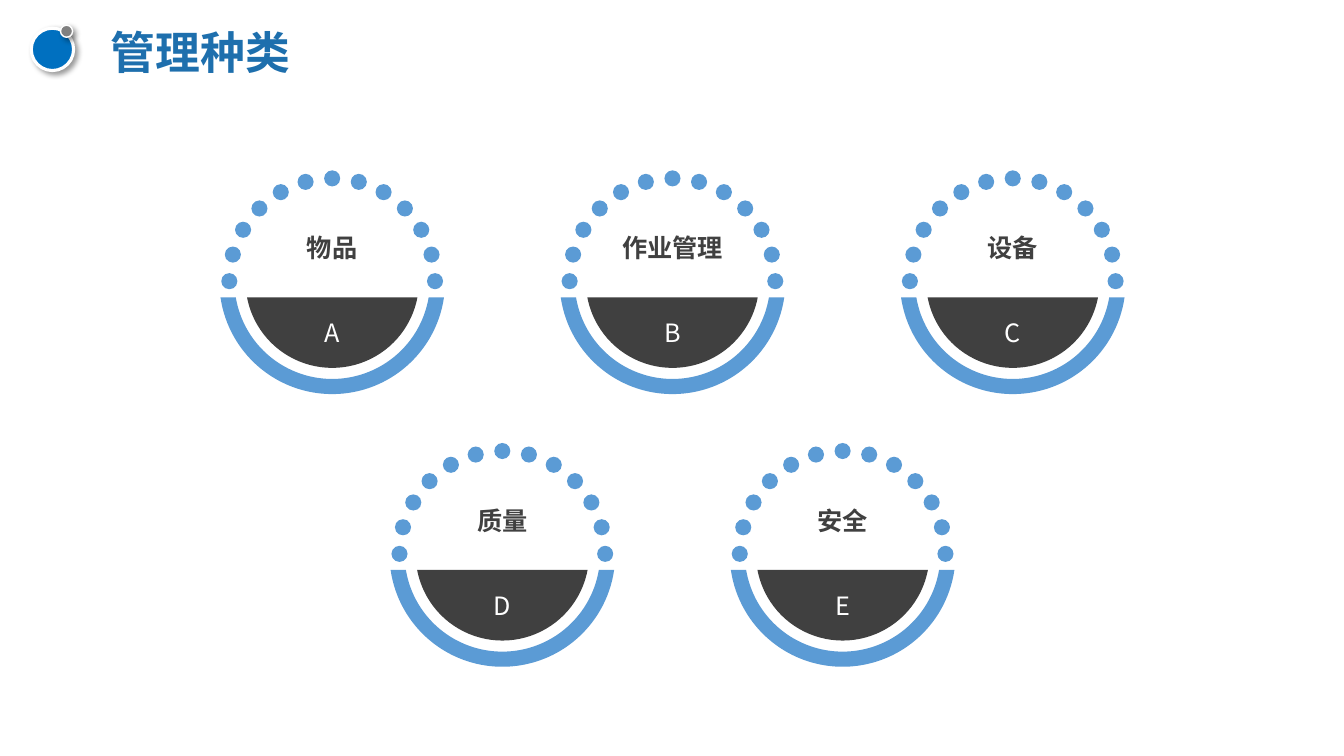
from dataclasses import dataclass
from math import asin, cos, degrees, radians, sin

from lxml.etree import SubElement
from pptx import Presentation
from pptx.dml.color import RGBColor
from pptx.enum.shapes import MSO_SHAPE
from pptx.enum.text import MSO_ANCHOR, MSO_AUTO_SIZE, PP_ALIGN
from pptx.oxml.ns import qn
from pptx.util import Inches, Pt


@dataclass(frozen=True)
class Theme:
    font: str = "Noto Sans CJK SC"
    title: str = "1E6FAD"
    orb: str = "0070C0"
    moon: str = "808080"
    accent: str = "5B9BD5"
    dark: str = "404040"
    white: str = "FFFFFF"
    shadow: str = "000000"
    title_size: int = 32
    body_size: int = 18


# Badge geometry in inches, measured from the badge centre
DOT_SIZE = 0.16
DOT_ORBIT = 1.02
RING_OUTER = 1.12
RING_INNER = 0.97
BOWL_RADIUS = 0.86
CUT = 0.16  # depth of the flat top edge below the centre

# Badge layout: (column offset from the middle, row, letter, label)
MIDDLE, FIRST_ROW = 6.67, 2.79
COLUMN_PITCH, ROW_PITCH = 3.375, 2.705
BADGES = [
    (-1, 0, "A", "物品"),
    (0, 0, "B", "作业管理"),
    (1, 0, "C", "设备"),
    (-0.5, 1, "D", "质量"),
    (0.5, 1, "E", "安全"),
]


def write_text(frame, text, *, font, size, color, bold=False,
               align=PP_ALIGN.LEFT, anchor=MSO_ANCHOR.TOP, spacing=None):
    frame.vertical_anchor = anchor
    para = frame.paragraphs[0]
    para.alignment = align
    if spacing:
        para.line_spacing = spacing
    span = para.add_run()
    span.text = text
    span.font.name = font
    span.font.size = Pt(size)
    span.font.bold = bold
    span.font.color.rgb = RGBColor.from_string(color)
    SubElement(span.font._element, qn("a:ea")).set("typeface", font)


class SlideBuilder:
    def __init__(self, slide, theme):
        self.slide = slide
        self.theme = theme

    def paint(self, shape, fill, line=None, width=0):
        shape.shadow.inherit = False
        shape.fill.solid()
        shape.fill.fore_color.rgb = RGBColor.from_string(fill)
        if line:
            shape.line.color.rgb = RGBColor.from_string(line)
            shape.line.width = Pt(width)
        else:
            shape.line.fill.background()

    def circle(self, group, x, y, size, fill, **outline):
        shape = group.shapes.add_shape(
            MSO_SHAPE.OVAL, Inches(x - size / 2), Inches(y - size / 2),
            Inches(size), Inches(size))
        self.paint(shape, fill, **outline)
        return shape

    def lower_arcs(self, group, x, y, fill, *radii):
        """Outline of arcs below the cut, running alternately left and right."""
        corners, arcs = [], []
        for index, radius in enumerate(radii):
            half = radius * cos(asin(CUT / radius))
            side = -1 if index % 2 else 1
            corners += [(x + side * half, y + CUT), (x, y + radius),
                        (x - side * half, y + CUT)]
            start = degrees(asin(CUT / radius))
            first = start if side == 1 else 180 - start
            arcs.append((radius, first, side * (180 - 2 * start)))
        corners = [(Inches(a), Inches(b)) for a, b in corners]
        builder = group.shapes.build_freeform(*corners[0])
        builder.add_line_segments(corners[1:], close=True)
        shape = builder.convert_to_shape()
        self.paint(shape, fill)

        # Turn each pair of lines through the bottom point into one true arc
        track = next(shape._element.iter(qn("a:pathLst")))[0]
        steps = list(track)
        for index, (radius, first, sweep) in enumerate(arcs):
            bottom, end = steps[3 * index + 1:3 * index + 3]
            size = str(Inches(radius))
            arc = SubElement(track, qn("a:arcTo"), wR=size, hR=size,
                             stAng=str(round(first * 60000)),
                             swAng=str(round(sweep * 60000)))
            track.replace(bottom, arc)
            track.remove(end)
        return shape

    def drop_shadow(self, shape):
        effects = shape._element.spPr.find(qn("a:effectLst"))
        shadow = SubElement(effects, qn("a:outerShdw"), blurRad=str(Pt(4)),
                            dist=str(Pt(3)), dir="2700000", algn="tl",
                            rotWithShape="0")
        color = SubElement(shadow, qn("a:srgbClr"), val=self.theme.shadow)
        SubElement(color, qn("a:alpha"), val="40000")

    def title(self, text):
        box = self.slide.shapes.title
        box.left, box.top = Inches(1), Inches(0.19)
        box.width, box.height = Inches(3.7), Inches(0.64)
        box.text_frame.auto_size = MSO_AUTO_SIZE.SHAPE_TO_FIT_TEXT
        write_text(box.text_frame, text, font=self.theme.font, bold=True,
                   size=self.theme.title_size, color=self.theme.title)

    def orb(self):
        group = self.slide.shapes.add_group_shape()
        for x, y, size, fill, width in [(0.52, 0.49, 0.42, self.theme.orb, 2.25),
                                        (0.66, 0.31, 0.12, self.theme.moon, 1)]:
            self.drop_shadow(self.circle(group, x, y, size, fill,
                                         line=self.theme.white, width=width))

    def label(self, group, x, y, text):
        width = 0.27 + 0.25 * len(text)
        box = group.shapes.add_textbox(Inches(x - width / 2), Inches(y),
                                       Inches(width), Inches(0.55))
        box.text_frame.word_wrap = False
        box.text_frame.auto_size = MSO_AUTO_SIZE.SHAPE_TO_FIT_TEXT
        write_text(box.text_frame, text, font=self.theme.font, bold=True,
                   size=self.theme.body_size, color=self.theme.dark,
                   align=PP_ALIGN.CENTER, spacing=1.5)

    def badge(self, x, y, letter, text):
        theme = self.theme
        group = self.slide.shapes.add_group_shape()
        # Dotted upper half
        for turn in range(-90, 91, 15):
            angle = radians(turn)
            self.circle(group, x + DOT_ORBIT * sin(angle),
                        y - DOT_ORBIT * cos(angle), DOT_SIZE, theme.accent)
        # Solid lower ring
        self.lower_arcs(group, x, y, theme.accent, RING_OUTER, RING_INNER)
        # Dark bowl with its letter
        bowl = self.lower_arcs(group, x, y, theme.dark, BOWL_RADIUS)
        write_text(bowl.text_frame, letter, font=theme.font,
                   size=theme.body_size, color=theme.white,
                   align=PP_ALIGN.CENTER, anchor=MSO_ANCHOR.MIDDLE)
        self.label(group, x, y - 0.68, text)


def main():
    deck = Presentation()
    deck.slide_width, deck.slide_height = Inches(13.33), Inches(7.5)
    page = SlideBuilder(deck.slides.add_slide(deck.slide_layouts[5]), Theme())

    # Heading
    page.orb()
    page.title("管理种类")

    # Five badges in two centred rows
    for column, row, letter, text in BADGES:
        page.badge(MIDDLE + column * COLUMN_PITCH, FIRST_ROW + row * ROW_PITCH,
                   letter, text)

    deck.save("out.pptx")


if __name__ == "__main__":
    main()
